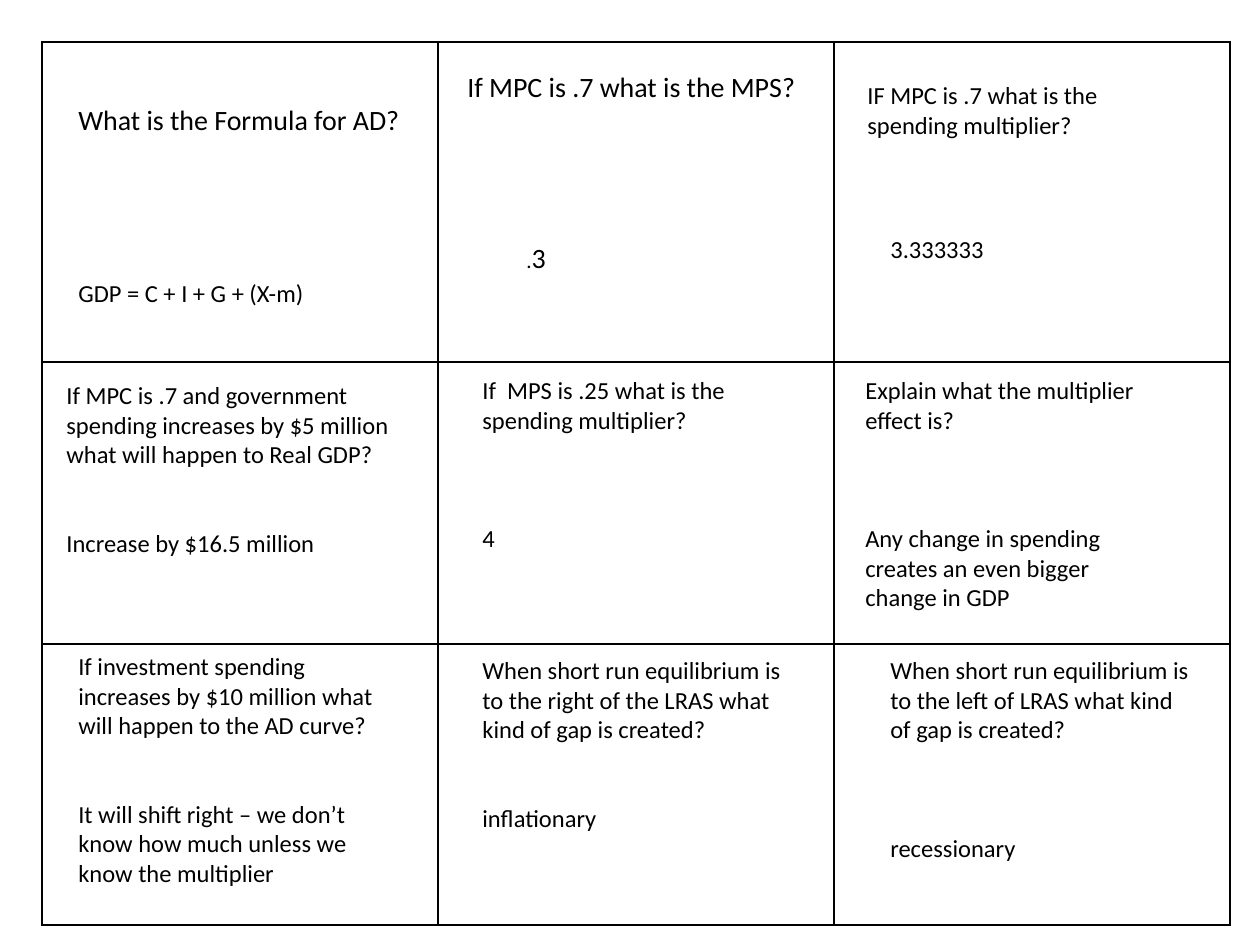
from lxml.etree import SubElement
from pptx import Presentation
from pptx.dml.color import RGBColor
from pptx.enum.text import MSO_AUTO_SIZE
from pptx.oxml.ns import qn
from pptx.util import Emu, Pt

SCALE = 914400 / 126  # EMU in one px
BLACK = "000000"
LINE_POINTS = 17  # height of one 14 pt text line


def px(*lengths):
    return [Emu(round(length * SCALE)) for length in lengths]


def add_run(paragraph, text, size):
    run = paragraph.add_run()
    run.text = text
    for name, value in {"name": "Calibri", "size": Pt(size)}.items():
        setattr(run.font, name, value)
    run.font.color.rgb = RGBColor.from_string(BLACK)


presentation = Presentation()
presentation.slide_width, presentation.slide_height = px(1260, 945)
slide = presentation.slides.add_slide(presentation.slide_layouts[6])

# Card grid
row_heights = [320, 282, 281]
column_width = 396
table = slide.shapes.add_table(
    3, 3, *px(42, 42, 3 * column_width, sum(row_heights))).table
for flag in ("first_row", "horz_banding"):
    setattr(table, flag, False)
for column in table.columns:
    column.width = px(column_width)[0]
for row, height in zip(table.rows, row_heights):
    row.height = px(height)[0]
for cell in table.iter_cells():
    properties = cell._tc.get_or_add_tcPr()
    for side in ("a:lnL", "a:lnR", "a:lnT", "a:lnB"):
        border = SubElement(properties, qn(side), w=str(Pt(1)))
        fill = SubElement(border, qn("a:solidFill"))
        SubElement(fill, qn("a:srgbClr"), val=BLACK)
    cell.fill.background()

# Each box: left, top, width, height, paragraphs of (text, size) runs,
# and the number of lines left free between question and answer
boxes = [
    (66, 96, 364, 47, [[("What is the Formula for AD?", 16)]], 0),
    (66, 272, 341, 43, [[("GDP = C + I + G + (X-m)", 14)]], 0),
    (455, 63, 378, 47, [[("If MPC is .7 what is the MPS?", 16)]], 0),
    (514, 234, 341, 47, [[(".", 12), ("3", 16)]], 0),
    (855, 74, 340, 72, [[("IF MPC is .7 what is the spending multiplier?", 14)]], 0),
    (878, 228, 341, 43, [[("3.333333", 14)]], 0),
    (54, 374, 365, 220, [
        [("If MPC is .7 and government spending increases by $5 million "
          "what will happen to Real GDP?", 14)],
        [("Increase by $16.5 million", 14)]], 2),
    (470, 369, 325, 190, [
        [("If  MPS is .25 what is the spending multiplier?", 14)],
        [("4", 14)]], 3),
    (853, 369, 325, 251, [
        [("Explain what the multiplier effect is?", 14)],
        [("Any change in spending creates an even bigger change in GDP", 14)]], 3),
    (66, 645, 325, 251, [
        [("If investment spending increases by $10 million "
          "what will happen to the AD curve?", 14)],
        [("It will shift right – we don’t know how much "
          "unless we know the multiplier", 14)]], 2),
    (470, 649, 325, 190, [
        [("When short run equilibrium is to the right of the LRAS "
          "what kind of gap is created?", 14)],
        [("inflationary", 14)]], 2),
    (878, 649, 325, 220, [
        [("When short run equilibrium is to the left of LRAS "
          "what kind of gap is created?", 14)],
        [("recessionary", 14)]], 3),
]
for left, top, width, height, paragraphs, gap_lines in boxes:
    frame = slide.shapes.add_textbox(*px(left, top, width, height)).text_frame
    frame.word_wrap = True
    frame.auto_size = MSO_AUTO_SIZE.SHAPE_TO_FIT_TEXT
    for index, runs in enumerate(paragraphs):
        paragraph = frame.add_paragraph() if index else frame.paragraphs[0]
        if index:
            paragraph.space_before = Pt(gap_lines * LINE_POINTS)
        for text, size in runs:
            add_run(paragraph, text, size)

presentation.save("out.pptx")
